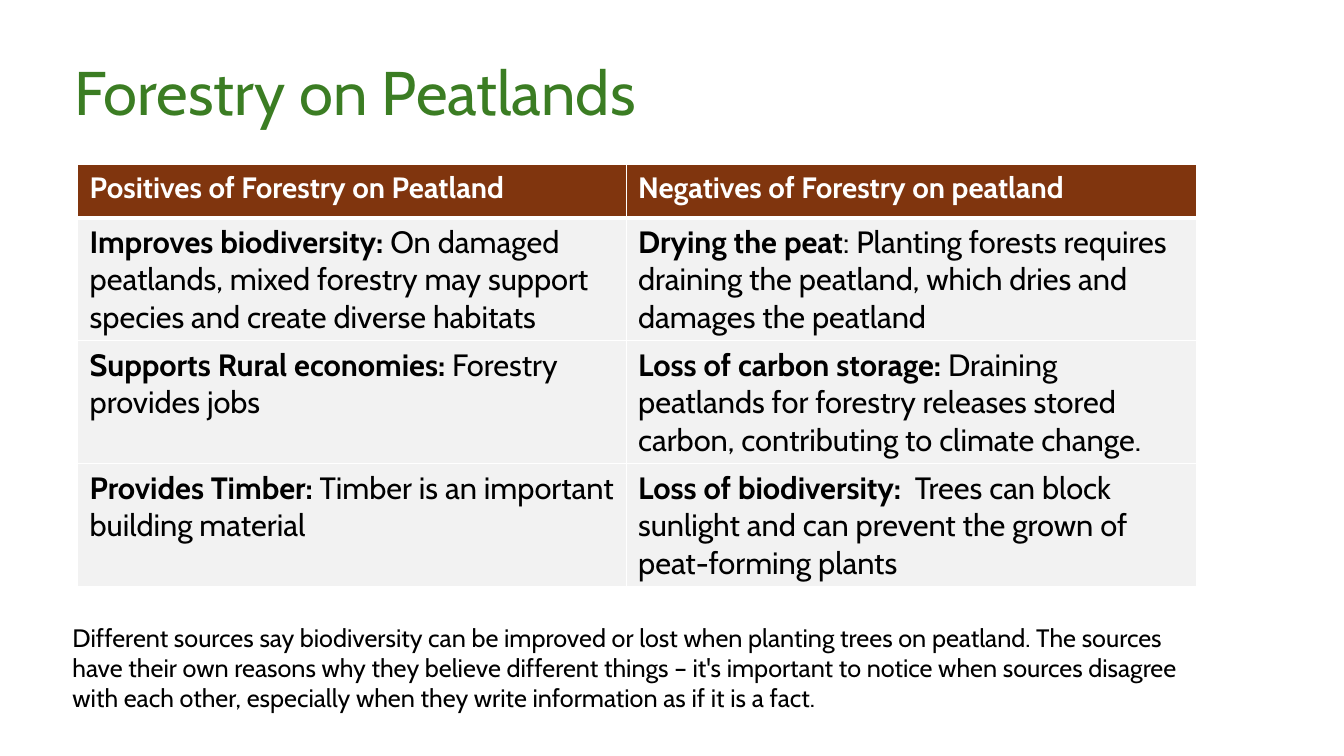
from dataclasses import dataclass

from lxml import etree
from pptx import Presentation
from pptx.dml.color import RGBColor
from pptx.enum.text import MSO_ANCHOR
from pptx.oxml.ns import qn
from pptx.util import Inches, Pt

MIDDLE, TOP = MSO_ANCHOR.MIDDLE, MSO_ANCHOR.TOP
FONT = "Cabin"
COLORS = {
    "title": "3B7D23",
    "header": "80350E",
    "body": "F2F2F2",
    "white": "FFFFFF",
    "black": "000000",
}
COLUMN_WIDTHS = (5.44, 5.66)
ROW_HEIGHTS = (0.53, 1.22, 1.22, 1.22)
MARGINS = {"margin_left": 0.12, "margin_right": 0.12, "margin_top": 0.06, "margin_bottom": 0.06}


@dataclass
class Argument:
    lead: str
    detail: str = ""


@dataclass
class TextBlock:
    text: str
    left: float
    top: float
    width: float
    height: float
    size: float
    color: str
    anchor: MSO_ANCHOR = TOP
    line_spacing: float = 1.0
    space_after: float = 0


TEXT_BLOCKS = (
    TextBlock("Forestry on Peatlands", 0.64, 0.27, 7.67, 1.35, 44, "title", MIDDLE, 0.9, 6),
    TextBlock(
        "Different sources say biodiversity can be improved or lost when planting trees on "
        "peatland. The sources have their own reasons why they believe different things – "
        "it's important to notice when sources disagree with each other, especially when "
        "they write information as if it is a fact.",
        0.62, 6.12, 11.41, 1.01, 18, "black",
    ),
)

ROWS = (
    (Argument("Positives of Forestry on Peatland"), Argument("Negatives of Forestry on peatland")),
    (
        Argument("Improves biodiversity: ",
                 "On damaged peatlands, mixed forestry may support species and create diverse habitats"),
        Argument("Drying the peat",
                 ": Planting forests requires draining the peatland, which dries and damages the peatland"),
    ),
    (
        Argument("Supports Rural economies: ", "Forestry provides jobs"),
        Argument("Loss of carbon storage: ",
                 "Draining peatlands for forestry releases stored carbon, contributing to climate change."),
    ),
    (
        Argument("Provides Timber:", " Timber is an important building material"),
        Argument("Loss of biodiversity:",
                 "  Trees can block sunlight and can prevent the grown of peat-forming plants"),
    ),
)


def add_run(p, text: str, size: float, color: str, bold: bool = False) -> None:
    r = p.add_run()
    r.text = text
    for name, value in {"name": FONT, "size": Pt(size), "bold": bold}.items():
        setattr(r.font, name, value)
    r.font.color.rgb = RGBColor.from_string(COLORS[color])


def add_text(s, block: TextBlock) -> None:
    box = (block.left, block.top, block.width, block.height)
    tf = s.shapes.add_textbox(*map(Inches, box)).text_frame
    tf.word_wrap = True
    tf.vertical_anchor = block.anchor
    p = tf.paragraphs[0]
    p.line_spacing = block.line_spacing
    p.space_after = Pt(block.space_after)
    add_run(p, block.text, block.size, block.color)


def set_borders(cell, widths: dict[str, float]) -> None:
    tc_pr = cell._tc.get_or_add_tcPr()
    for index, (side, width) in enumerate(widths.items()):
        line = etree.Element(qn(f"a:ln{side}"), w=str(Pt(width)))
        fill = etree.SubElement(line, qn("a:solidFill"))
        etree.SubElement(fill, qn("a:srgbClr"), val=COLORS["white"])
        tc_pr.insert(index, line)


def fill_cell(cell, argument: Argument, row: int) -> None:
    header = row == 0
    for name, value in MARGINS.items():
        setattr(cell, name, Inches(value))
    cell.fill.solid()
    cell.fill.fore_color.rgb = RGBColor.from_string(COLORS["header" if header else "body"])
    set_borders(cell, {"L": 1, "R": 1, "T": 3 if row == 1 else 1, "B": 3 if header else 1})
    size, color = (21, "white") if header else (22, "black")
    p = cell.text_frame.paragraphs[0]
    add_run(p, argument.lead, size, color, True)
    if argument.detail:
        add_run(p, argument.detail, size, color)


def add_arguments_table(s) -> None:
    box = (0.77, 1.63, sum(COLUMN_WIDTHS), sum(ROW_HEIGHTS))
    table = s.shapes.add_table(len(ROWS), len(COLUMN_WIDTHS), *map(Inches, box)).table
    table.horz_banding = False
    for column, width in zip(table.columns, COLUMN_WIDTHS):
        column.width = Inches(width)
    for i, (height, arguments) in enumerate(zip(ROW_HEIGHTS, ROWS)):
        table.rows[i].height = Inches(height)
        for j, argument in enumerate(arguments):
            fill_cell(table.cell(i, j), argument, i)


def main() -> None:
    prs = Presentation()
    prs.slide_width, prs.slide_height = Inches(13.33), Inches(7.5)
    s = prs.slides.add_slide(prs.slide_layouts[6])
    title, note = TEXT_BLOCKS
    add_text(s, title)
    add_arguments_table(s)
    add_text(s, note)
    prs.save("out.pptx")


if __name__ == "__main__":
    main()
